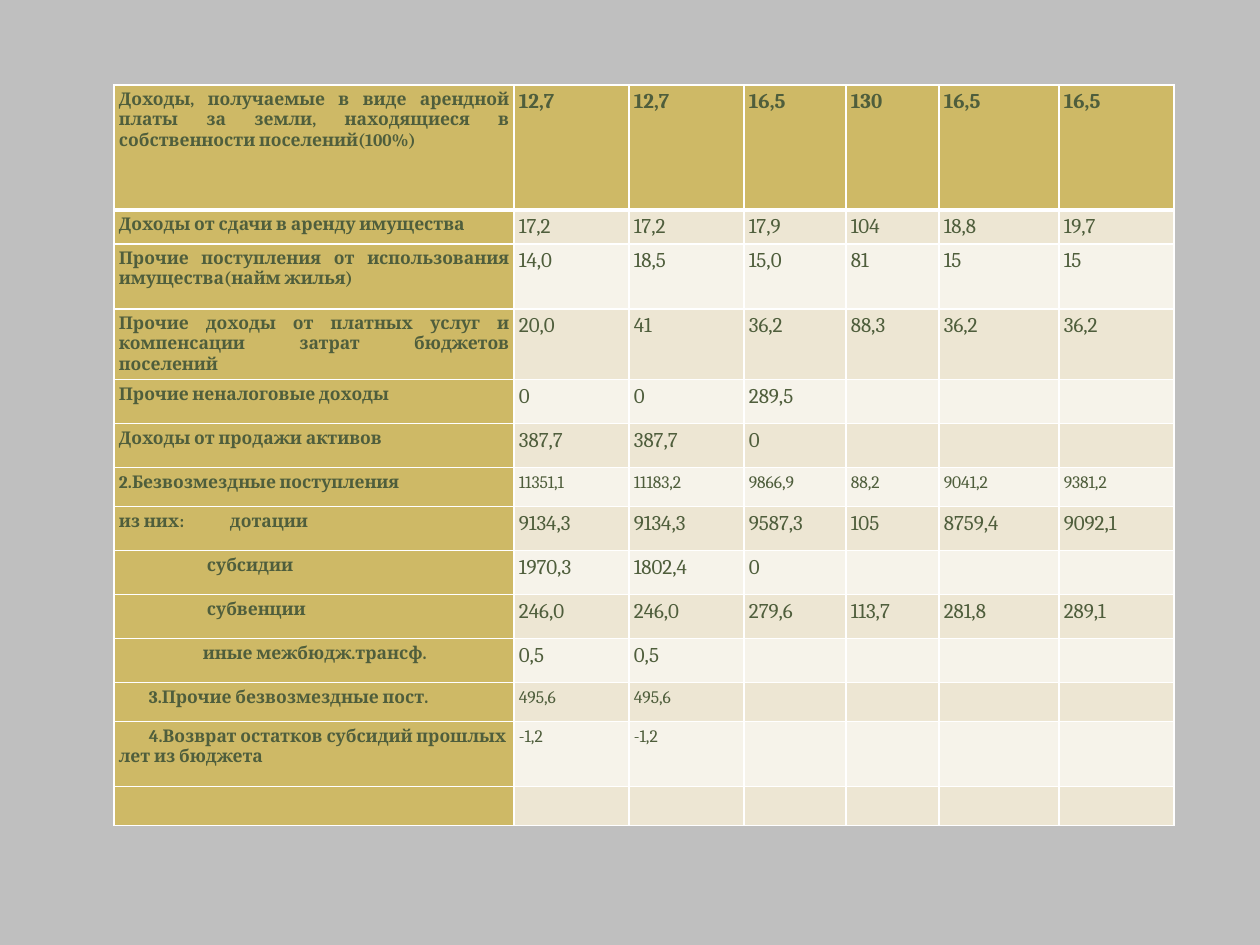
import pptx
import pptx.util
import pptx.dml.color
import pptx.enum.text
import pptx.oxml
import pptx.oxml.ns
from lxml import etree

PX = 914400 // 126
COLORS = {"page": "BFBFBF", "label": "CEB966", "odd": "EDE6D3", "even": "F6F3EA",
          "text": "4F5E3C", "line": "FFFFFF"}
A = pptx.oxml.ns.nsdecls("a")
qn = pptx.oxml.ns.qn
ALIGN = pptx.enum.text.PP_ALIGN


def rgb(name):
    return pptx.dml.color.RGBColor.from_string(COLORS[name])


def add_border(cell, side, points):
    cell._tc.get_or_add_tcPr().append(pptx.oxml.parse_xml(
        f'<a:{side} {A} w="{points * 12700}"><a:solidFill>'
        f'<a:srgbClr val="{COLORS["line"]}"/></a:solidFill></a:{side}>'))


# Row height, value size, first-line indent, label, values
ROWS = [
    (125, 12, 0, "Доходы, получаемые в виде арендной платы за земли, находящиеся "
     "в собственности поселений(100%)", "12,7 12,7 16,5 130 16,5 16,5"),
    (34, 12, 0, "Доходы от сдачи в аренду имущества", "17,2 17,2 17,9 104 18,8 19,7"),
    (65, 12, 0, "Прочие поступления от использования имущества(найм жилья)",
     "14,0 18,5 15,0 81 15 15"),
    (65, 12, 0, "Прочие доходы от платных услуг и компенсации затрат бюджетов поселений",
     "20,0 41 36,2 88,3 36,2 36,2"),
    (44, 12, 0, "Прочие неналоговые доходы", "0 0 289,5"),
    (44, 12, 0, "Доходы от продажи активов", "387,7 387,7 0"),
    (39, 10, 0, "2.Безвозмездные поступления", "11351,1 11183,2 9866,9 88,2 9041,2 9381,2"),
    (44, 12, 0, "из них:\tдотации", "9134,3 9134,3 9587,3 105 8759,4 9092,1"),
    (44, 12, 88, "субсидии", "1970,3 1802,4 0"),
    (44, 12, 88, "субвенции", "246,0 246,0 279,6 113,7 281,8 289,1"),
    (44, 12, 84, "иные межбюдж.трансф.", "0,5 0,5"),
    (39, 10, 30, "3.Прочие безвозмездные пост.", "495,6 495,6"),
    (65, 10, 30, "4.Возврат остатков субсидий прошлых лет из бюджета", "-1,2 -1,2"),
    (39, 10, 0, "", ""),
]
WIDTHS = [400, 115, 115, 102, 93, 120, 115]
TAB = 111

prs = pptx.Presentation()
prs.slide_width, prs.slide_height = 1260 * PX, 945 * PX
s = prs.slides.add_slide(prs.slide_layouts[6])
s.background.fill.solid()
s.background.fill.fore_color.rgb = rgb("page")

# Budget revenue table
table = s.shapes.add_table(len(ROWS), len(WIDTHS), 114 * PX, 85 * PX, sum(WIDTHS) * PX,
                           sum(row[0] for row in ROWS) * PX).table
for column, width in zip(table.columns, WIDTHS):
    column.width = width * PX

for i, (height, size, indent, label, values) in enumerate(ROWS):
    table.rows[i].height = height * PX
    texts = [label] + values.split()
    texts += [""] * (len(WIDTHS) - len(texts))
    for j, text in enumerate(texts):
        cell = table.cell(i, j)
        for side in ("left", "right", "top", "bottom"):
            setattr(cell, "margin_" + side, 5 * PX)

        # Thick rule under the first row, thin ones elsewhere
        for side, thick_row in (("lnL", None), ("lnR", None), ("lnT", 1), ("lnB", 0)):
            add_border(cell, side, 3 if i == thick_row else 1)
        cell.fill.solid()
        cell.fill.fore_color.rgb = rgb("label" if i == 0 or j == 0 else
                                       "odd" if i % 2 else "even")

        # Text
        p = cell.text_frame.paragraphs[0]
        if not text:
            etree.SubElement(p._p, qn("a:endParaRPr"), sz="1000")
            continue
        p.alignment = ALIGN.LEFT if j == 0 and indent == 30 else ALIGN.JUSTIFY
        if j == 0 and indent:
            p._p.get_or_add_pPr().set("indent", str(indent * PX))
        if "\t" in text:
            tabs = etree.SubElement(p._p.get_or_add_pPr(), qn("a:tabLst"))
            etree.SubElement(tabs, qn("a:tab"), pos=str(TAB * PX), algn="l")
        r = p.add_run()
        r.text = text
        font = {"name": "Cambria", "size": pptx.util.Pt(size if j else 10),
                "bold": i == 0 or j == 0}
        for key, value in font.items():
            setattr(r.font, key, value)
        r.font.color.rgb = rgb("text")

prs.save("out.pptx")
